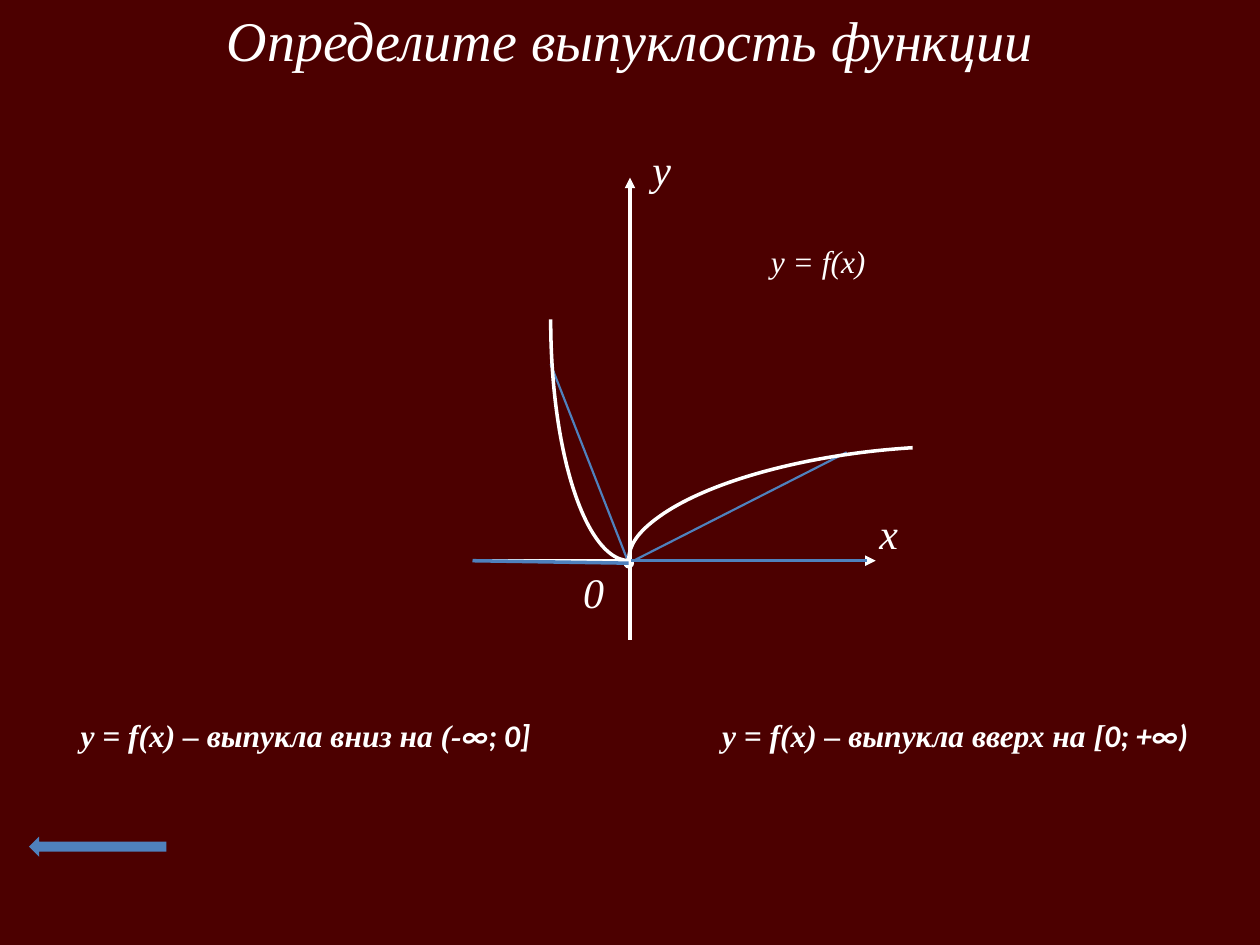
from dataclasses import dataclass
from typing import NamedTuple, Optional

from lxml.etree import SubElement
from pptx import Presentation
from pptx.dml.color import RGBColor
from pptx.enum.shapes import MSO_CONNECTOR, MSO_SHAPE
from pptx.enum.text import MSO_ANCHOR, MSO_AUTO_SIZE, PP_ALIGN
from pptx.oxml.ns import qn
from pptx.util import Pt

EMU_PER_PX = 9144  # 100 px to the inch


@dataclass(frozen=True)
class Theme:
    background: RGBColor = RGBColor(0x4C, 0x00, 0x00)
    white: RGBColor = RGBColor(0xFF, 0xFF, 0xFF)
    blue: RGBColor = RGBColor(0x4F, 0x81, 0xBD)
    serif: str = "Times New Roman"
    sans: str = "Calibri"
    title_size: int = 32
    axis_size: int = 24
    text_size: int = 18
    thick: float = 2
    thin: float = 1.25


THEME = Theme()


class Box(NamedTuple):
    left: int
    top: int
    width: int
    height: int


class Line(NamedTuple):
    start: tuple[int, int]
    end: tuple[int, int]
    color: RGBColor
    width: float
    head: Optional[str] = None


class Label(NamedTuple):
    text: str
    box: Box
    size: int
    wrap: bool = True


class Curve(NamedTuple):
    box: Box
    rotation: float
    angles: tuple[float, float]
    head: Optional[str] = None


class Conclusion(NamedTuple):
    statement: str
    interval: str
    box: Box


def px(value: int) -> int:
    return value * EMU_PER_PX


def emu(box: Box) -> list[int]:
    return [px(value) for value in box]


def style_line(shape, color: RGBColor, width: float, head: Optional[str]) -> None:
    shape.line.color.rgb = color
    shape.line.width = Pt(width)
    if head:
        outline = shape.element.spPr.get_or_add_ln()
        SubElement(outline, qn("a:headEnd"), type=head)


def draw_line(slide, line: Line) -> None:
    connector = slide.shapes.add_connector(
        MSO_CONNECTOR.STRAIGHT, *map(px, line.start + line.end))
    style_line(connector, line.color, line.width, line.head)
    SubElement(connector.element.spPr, qn("a:effectLst"))


def draw_curve(slide, curve: Curve) -> None:
    arc = slide.shapes.add_shape(MSO_SHAPE.ARC, *emu(curve.box))
    arc.shadow.inherit = False
    arc.fill.background()
    arc.rotation = curve.rotation
    for index, angle in enumerate(curve.angles):
        arc.adjustments[index] = angle
    style_line(arc, THEME.white, THEME.thick, curve.head)


def style_run(run, size: int, name: str = THEME.serif, bold: bool = False) -> None:
    run.font.size = Pt(size)
    run.font.name = name
    run.font.bold = bold
    run.font.italic = True
    run.font.color.rgb = THEME.white


def add_text_frame(slide, box: Box, wrap: bool = True):
    text_frame = slide.shapes.add_textbox(*emu(box)).text_frame
    text_frame.word_wrap = wrap
    text_frame.auto_size = MSO_AUTO_SIZE.SHAPE_TO_FIT_TEXT
    return text_frame


def draw_label(slide, label: Label) -> None:
    text_frame = add_text_frame(slide, label.box, label.wrap)
    text_frame.text = label.text
    style_run(text_frame.paragraphs[0].runs[0], label.size)


def draw_conclusion(slide, conclusion: Conclusion) -> None:
    paragraph = add_text_frame(slide, conclusion.box).paragraphs[0]
    paragraph.alignment = PP_ALIGN.CENTER
    for text, name in ((conclusion.statement, THEME.serif),
                       (conclusion.interval, THEME.sans)):
        run = paragraph.add_run()
        run.text = text
        style_run(run, THEME.text_size, name, bold=True)


def draw_title(slide, text: str, box: Box) -> None:
    title = slide.shapes.title
    title.left, title.top, title.width, title.height = emu(box)
    text_frame = title.text_frame
    text_frame.text = text
    text_frame.word_wrap = True
    text_frame.auto_size = MSO_AUTO_SIZE.SHAPE_TO_FIT_TEXT
    text_frame.vertical_anchor = MSO_ANCHOR.MIDDLE
    text_frame.paragraphs[0].alignment = PP_ALIGN.CENTER
    style_run(text_frame.paragraphs[0].runs[0], THEME.title_size)


def draw_back_arrow(slide, box: Box) -> None:
    arrow = slide.shapes.add_shape(MSO_SHAPE.LEFT_ARROW, *emu(box))
    arrow.shadow.inherit = False
    arrow.fill.solid()
    arrow.fill.fore_color.rgb = THEME.blue
    arrow.line.fill.background()


CHORDS_AND_AXES = [
    Line((437, 289), (499, 447), THEME.blue, THEME.thin),
    Line((499, 447), (672, 359), THEME.blue, THEME.thin),
    Line((500, 141), (500, 508), THEME.white, THEME.thick, "triangle"),
    Line((695, 445), (375, 445), THEME.white, THEME.thick, "triangle"),
]
LABELS = [
    Label("x", Box(688, 398, 55, 50), THEME.axis_size),
    Label("0", Box(453, 445, 55, 50), THEME.axis_size),
    Label("y", Box(508, 109, 55, 50), THEME.axis_size),
    Label("y = f(x)", Box(602, 187, 96, 40), THEME.text_size, wrap=False),
]
CURVES = [
    Curve(Box(437, 62, 125, 383), 180, (162, 0)),
    Curve(Box(637, 218, 138, 416), 264.2, (162, 12.22), "oval"),
]
INTERVALS = [
    Line((375, 445), (499, 447), THEME.blue, THEME.thick),
    Line((501, 445), (688, 445), THEME.blue, THEME.thick),
]
CONCLUSIONS = [
    Conclusion("y = f(x) – выпукла вниз на (-", "∞; 0]", Box(47, 563, 391, 40)),
    Conclusion("y = f(x) – выпукла вверх на [", "0; +∞)", Box(547, 563, 422, 40)),
]


def main() -> None:
    presentation = Presentation()
    presentation.slide_width, presentation.slide_height = px(1000), px(750)
    slide = presentation.slides.add_slide(presentation.slide_layouts[5])
    slide.background.fill.solid()
    slide.background.fill.fore_color.rgb = THEME.background

    draw_title(slide, "Определите выпуклость функции", Box(0, -1, 1000, 64))

    # Graph
    for line in CHORDS_AND_AXES:
        draw_line(slide, line)
    for label in LABELS:
        draw_label(slide, label)
    for curve in CURVES:
        draw_curve(slide, curve)
    for line in INTERVALS:
        draw_line(slide, line)

    # Conclusions and navigation
    for conclusion in CONCLUSIONS:
        draw_conclusion(slide, conclusion)
    draw_back_arrow(slide, Box(23, 664, 109, 16))

    presentation.save("out.pptx")


if __name__ == "__main__":
    main()
